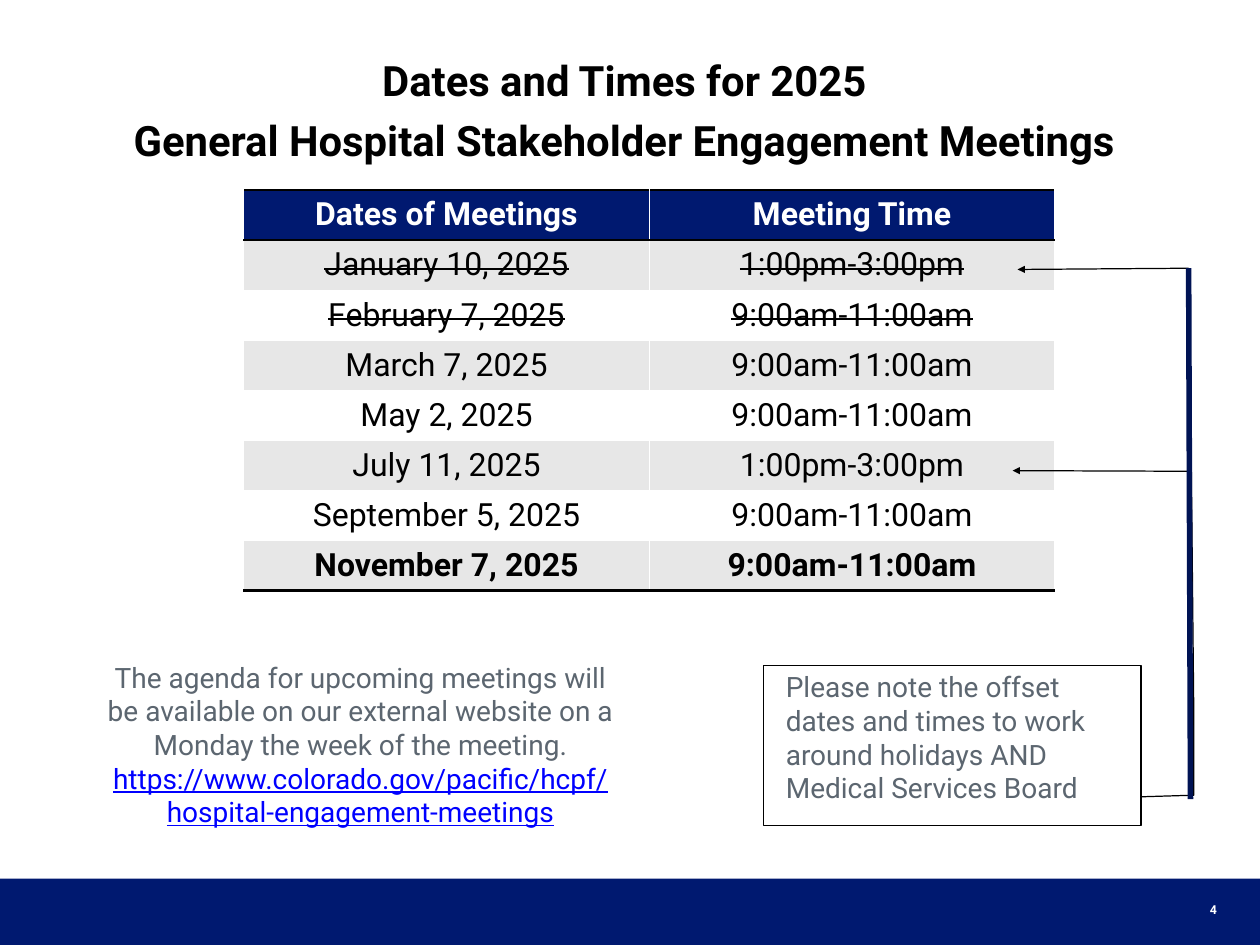
from lxml import etree
from pptx import Presentation
from pptx import util as u
from pptx.dml import color
from pptx.enum import shapes, text
from pptx.oxml import ns

Pt = u.Pt
COLORS = {"navy": "001970", "rail": "001354", "gray": "5C6670", "link": "0000FF",
          "band": "E7E7E7", "white": "FFFFFF", "black": "000000"}


def rgb(name):
    return color.RGBColor.from_string(COLORS[name])


def write(para, words, size, tint, align=text.PP_ALIGN.CENTER, **formats):
    para.alignment = align
    span = para.add_run()
    span.text = words
    for key, value in {"name": "Roboto", "size": Pt(size), "bold": False, **formats}.items():
        setattr(span.font, key, value)
    span.font.color.rgb = rgb(tint)
    return span


deck = Presentation()
deck.slide_width, deck.slide_height = Pt(1024), Pt(768)
page = deck.slides.add_slide(deck.slide_layouts[5])

bar = page.shapes.add_shape(shapes.MSO_SHAPE.RECTANGLE, 0, Pt(714), Pt(1024), Pt(54))
bar.shadow.inherit = False
bar.fill.solid()
bar.fill.fore_color.rgb = rgb("navy")
bar.line.fill.background()

title = page.shapes.title
title.left, title.top, title.width, title.height = Pt(38), Pt(29), Pt(939), Pt(120)
frame = title.text_frame
frame.auto_size = text.MSO_AUTO_SIZE.NONE
frame.vertical_anchor = text.MSO_ANCHOR.MIDDLE
write(frame.paragraphs[0], "Dates and Times for 2025", 34, "black", bold=True)
para = frame.add_paragraph()
para.space_before = Pt(8)
write(para, "General Hospital Stakeholder Engagement Meetings", 34, "black", bold=True)

EARLY, LATE = "9:00am-11:00am", "1:00pm-3:00pm"
meetings = [
    ("Dates of Meetings", "Meeting Time"),
    ("January 10, 2025", LATE),
    ("February 7, 2025", EARLY),
    ("March 7, 2025", EARLY),
    ("May 2, 2025", EARLY),
    ("July 11, 2025", LATE),
    ("September 5, 2025", EARLY),
    ("November 7, 2025", EARLY),
]
last = len(meetings) - 1
row_height = 40.7
holder = page.shapes.add_table(len(meetings), 2, Pt(198), Pt(154.5), Pt(659),
                               Pt(row_height * len(meetings)))
table = holder.table
table.columns[0].width, table.columns[1].width = Pt(330), Pt(329)
for r, meeting in enumerate(meetings):
    table.rows[r].height = Pt(row_height)
    for c, words in enumerate(meeting):
        cell = table.cell(r, c)
        cell.margin_left = cell.margin_right = Pt(10)
        cell.margin_top = cell.margin_bottom = Pt(5)
        cell.fill.solid()
        cell.fill.fore_color.rgb = rgb("navy" if r == 0 else "band" if r % 2 else "white")
        span = write(cell.text_frame.paragraphs[0], words, 26,
                     "black" if r else "white", bold=r in (0, last))
        if r in (1, 2):
            span.font._element.set("strike", "sngStrike")
        sides = {0: ("lnB", "lnT"), last: ("lnB",)}.get(r, ())
        for side in sides:
            border = etree.Element(ns.qn("a:" + side), w=str(Pt(2)))
            fill = etree.SubElement(border, ns.qn("a:solidFill"))
            etree.SubElement(fill, ns.qn("a:srgbClr"), val=COLORS["black"])
            cell._tc.get_or_add_tcPr().insert(0, border)

callout = page.shapes.add_shape(shapes.MSO_SHAPE.LINE_CALLOUT_3,
                                Pt(620.6), Pt(540.7), Pt(306.7), Pt(130.3))
callout.rotation = 180
callout.shadow.inherit = False
callout.fill.background()
callout.line.color.rgb = rgb("black")
callout.line.width = Pt(1)
for i, bend in enumerate((0.18, 0, 0.19, -0.14, 0.68, -0.14, 3.03, -0.13)):
    callout.adjustments[i] = bend

frames = []
for left, top, width, height in ((827, 719, 169, 41), (78, 533, 430, 186), (631.5, 540.7, 287, 117)):
    box = page.shapes.add_textbox(Pt(left), Pt(top), Pt(width), Pt(height))
    box.text_frame.word_wrap = True
    frames.append(box.text_frame)
number, agenda, note = frames

number.vertical_anchor = text.MSO_ANCHOR.MIDDLE
write(number.paragraphs[0], "4", 10, "white", text.PP_ALIGN.RIGHT, bold=True)
write(agenda.paragraphs[0], "The agenda for upcoming meetings will be available on our external "
      "website on a Monday the week of the meeting.", 22.8, "gray")
write(agenda.add_paragraph(), "https://www.colorado.gov/pacific/hcpf/hospital-engagement-meetings",
      22.8, "link", underline=True)
write(note.paragraphs[0], "Please note the offset dates and times to work around holidays AND "
      "Medical Services Board", 22.8, "gray", text.PP_ALIGN.LEFT)

for start, end, tint, weight, arrow in (
    ((966, 383), (823, 382.5), "black", 1, True),
    ((966, 218), (827, 219), "black", 1, True),
    ((966, 218), (967.5, 649.5), "rail", 4.5, False),
):
    line = page.shapes.add_connector(shapes.MSO_CONNECTOR.STRAIGHT,
                                     *(Pt(value) for value in start + end))
    line.line.color.rgb = rgb(tint)
    line.line.width = Pt(weight)
    if arrow:
        etree.SubElement(line.line._get_or_add_ln(), ns.qn("a:tailEnd"), type="triangle")
    etree.SubElement(line._element.spPr, ns.qn("a:effectLst"))

deck.save("out.pptx")
